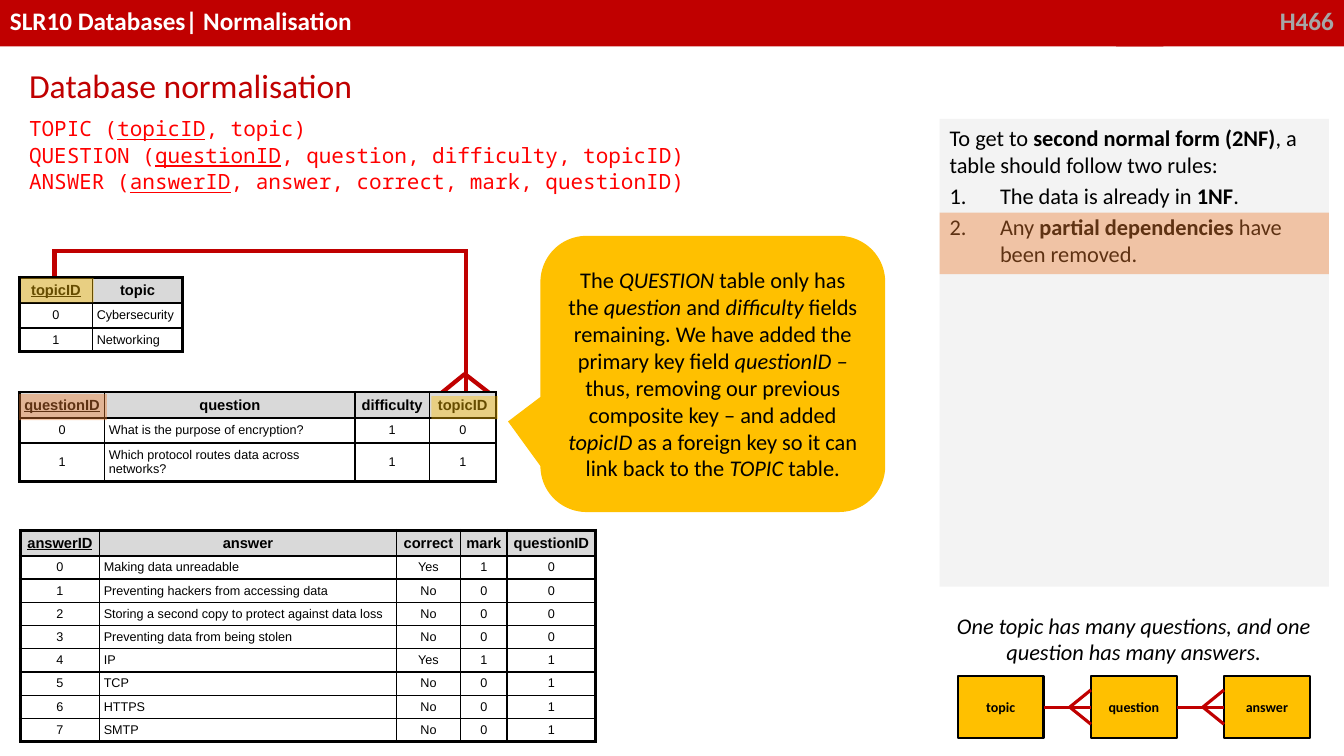
from lxml.etree import Element, SubElement as sub
from pptx import Presentation
from pptx.dml.color import RGBColor as RGB
from pptx.enum.shapes import MSO_CONNECTOR as CONN, MSO_SHAPE as SHAPE
from pptx.enum.text import MSO_ANCHOR as ANCHOR, PP_ALIGN as ALIGN
from pptx.oxml.ns import qn
from pptx.util import Inches, Pt

RED = RGB(0xC0, 0x00, 0x00)
BRIGHT = RGB(0xFF, 0x00, 0x00)
GOLD = RGB(0xFF, 0xC0, 0x00)
ORANGE = RGB(0xED, 0x7D, 0x31)
BLACK = RGB(0x00, 0x00, 0x00)
WHITE = RGB(0xFF, 0xFF, 0xFF)
PALE = RGB(0xF2, 0xF2, 0xF2)
GREY = RGB(0xD9, 0xD9, 0xD9)
MUTED = RGB(0xA6, 0xA6, 0xA6)

# Content: asterisks enclose the marked words
SCHEMA = [
    "TOPIC (*topicID*, topic)",
    "QUESTION (*questionID*, question, difficulty, topicID)",
    "ANSWER (*answerID*, answer, correct, mark, questionID)",
]
RULES = [
    "To get to *second normal form (2NF)*, a table should follow two rules:",
    "The data is already in *1NF*.",
    "Any *partial dependencies *have been removed.",
]
NOTE = ("The *QUESTION* table only has the *question* and *difficulty* fields "
        "remaining. We have added the primary key field *questionID – *thus, "
        "removing our previous composite key – and added *topicID* as a foreign "
        "key so it can link back to the *TOPIC* table.")
SUMMARY = "One topic has many questions, and one question has many answers."
TABLES = [
    dict(at=(0.2, 5.26), cols=[0.79, 2.94, 0.64, 0.46, 0.88],
         heights=[0.25] + [0.23] * 8, left=1, rows=[
        ("*answerID*", "answer", "correct", "mark", "questionID"),
        ("0", "Making data unreadable", "Yes", "1", "0"),
        ("1", "Preventing hackers from accessing data", "No", "0", "0"),
        ("2", "Storing a second copy to protect against data loss", "No", "0", "0"),
        ("3", "Preventing data from being stolen", "No", "0", "0"),
        ("4", "IP", "Yes", "1", "1"),
        ("5", "TCP", "No", "0", "1"),
        ("6", "HTTPS", "No", "0", "1"),
        ("7", "SMTP", "No", "0", "1")]),
    dict(at=(0.19, 2.75), cols=[0.73, 0.89], heights=[0.25, 0.25, 0.23],
         left=1, rows=[
        ("*topicID*", "topic"),
        ("0", "Cybersecurity"),
        ("1", "Networking")]),
    dict(at=(0.19, 3.89), cols=[0.85, 2.48, 0.74, 0.66],
         heights=[0.25, 0.25, 0.38], left=1, rows=[
        ("*questionID*", "question", "difficulty", "topicID"),
        ("0", "What is the purpose of encryption?", "1", "0"),
        ("1", "Which protocol routes data across networks?", "1", "1")]),
]
KEYS = [((0.21, 2.76, 0.72, 0.24), GOLD), ((0.19, 3.91, 0.87, 0.26), ORANGE),
        ((4.28, 3.93, 0.66, 0.23), GOLD), ((9.32, 2.11, 3.86, 0.61), ORANGE)]
LINKS = [(0.54, 2.75, 0.54, 2.47), (0.52, 2.49, 4.61, 2.49),
         (4.62, 4, 4.62, 2.47), (4.34, 3.93, 4.61, 3.71), (4.88, 3.92, 4.61, 3.71)]
ENTITIES = ["topic", "question", "answer"]

deck = Presentation()
deck.slide_width, deck.slide_height = Inches(13.33), Inches(7.5)
slide = deck.slides.add_slide(deck.slide_layouts[6])
shapes = slide.shapes


def write(frame, text, size=16, font="Calibri", color=BLACK, align=ALIGN.LEFT,
          mark="bold", gap=0, line=None, after=None, **style):
    """Fill a text frame, one paragraph for each line of text."""
    frame.word_wrap = True
    for i, part in enumerate(text.split("\n")):
        para = frame.paragraphs[0] if i == 0 else frame.add_paragraph()
        para.alignment = align
        if i and gap:
            para.space_before = Pt(gap)
        if line:
            para.line_spacing = line
        if after:
            para.space_after = Pt(after)
        for j, words in enumerate(part.split("*")):
            if not words:
                continue
            run = para.add_run()
            run.text = words
            face = run.font
            face.size, face.name, face.color.rgb = Pt(size), font, color
            for name in style:
                setattr(face, name, style[name])
            if j % 2:
                setattr(face, mark, True)


def block(at, fill, kind=SHAPE.RECTANGLE, alpha=100, edge=None,
          anchor=ANCHOR.TOP):
    box = shapes.add_shape(kind, *map(Inches, at))
    box.shadow.inherit = False
    box.fill.solid()
    box.fill.fore_color.rgb = fill
    if alpha < 100:
        tint = box._element.spPr.find(".//" + qn("a:srgbClr"))
        sub(tint, qn("a:alpha"), val=str(alpha * 1000))
    if edge:
        box.line.color.rgb, box.line.width = BLACK, Pt(edge)
    else:
        box.line.fill.background()
    box.text_frame.vertical_anchor = anchor
    return box


def label(at, text, **style):
    write(shapes.add_textbox(*map(Inches, at)).text_frame, text, **style)


def rule(ends, width):
    line = shapes.add_connector(CONN.STRAIGHT, *map(Inches, ends))
    line.line.color.rgb, line.line.width = RED, Pt(width)
    sub(line._element.spPr, qn("a:effectLst"))
    return line


def border(cell, sides):
    props = cell._tc.get_or_add_tcPr()
    for i, (side, width) in enumerate(zip("LRTB", sides)):
        edge = Element(qn("a:ln" + side), w=str(Pt(width)))
        sub(sub(edge, qn("a:solidFill")), qn("a:srgbClr"), val=str(BLACK))
        props.insert(i, edge)


def grid(at, cols, heights, left, rows):
    """Draw a table; column number left holds left-aligned text."""
    size = sum(cols), sum(heights)
    table = shapes.add_table(len(rows), len(cols), *map(Inches, at + size)).table
    table.first_row = table.horz_banding = False
    for col, width in zip(table.columns, cols):
        col.width = Inches(width)
    for r, row in enumerate(rows):
        table.rows[r].height = Inches(heights[r])
        head, last = r == 0, r == len(rows) - 1
        for c, text in enumerate(row):
            cell = table.cell(r, c)
            cell.margin_left = cell.margin_right = Inches(0.04)
            cell.margin_top = cell.margin_bottom = Inches(0.04)
            cell.vertical_anchor = ANCHOR.MIDDLE
            if head:
                cell.fill.solid()
                cell.fill.fore_color.rgb = GREY
            else:
                cell.fill.background()
            border(cell, (2.25 if c == 0 else 1,
                          2.25 if c == len(row) - 1 else 1,
                          2.25 if head else 1.5 if r == 1 else 1,
                          2.25 if last else 1.5 if head else 1))
            side = ALIGN.LEFT if c == left and not head else ALIGN.CENTER
            write(cell.text_frame, text, size=10.5 if head else 9, font="Arial",
                  align=side, mark="underline", bold=head)


# Header bar
write(block((11.07, 0, 2.26, 0.46), RED).text_frame, "H466",
      size=18, color=MUTED, align=ALIGN.RIGHT, bold=True)
write(block((0, 0, 11.54, 0.46), RED).text_frame,
      "SLR10 Databases| Normalisation", size=18, color=WHITE, bold=True)

# Rules panel, with its last two lines numbered
panel = block((9.32, 1.18, 3.86, 4.64), PALE, alpha=90).text_frame
write(panel, "\n".join(RULES), gap=3.2)
for para in panel.paragraphs[1:]:
    props = para._p.get_or_add_pPr()
    props.set("marL", str(Inches(0.5)))
    props.set("indent", str(Inches(-0.5)))
    sub(props, qn("a:buFont"), typeface="+mj-lt")
    sub(props, qn("a:buAutoNum"), type="arabicPeriod")

# Title and schema
write(block((0.19, 0.57, 9.23, 0.51), WHITE, alpha=70).text_frame,
      "Database normalisation", size=24, color=RED, line=1.07, after=8)
label((0.19, 1.1, 8.77, 0.96), "\n".join(SCHEMA), size=15,
      font="Noto Sans Mono", color=BRIGHT, mark="underline", gap=1)

# Callout
note = block((5.36, 2.34, 3.42, 2.74), GOLD, anchor=ANCHOR.MIDDLE,
             kind=SHAPE.ROUNDED_RECTANGULAR_CALLOUT)
for i, value in enumerate((-0.594, 0.172, 0.167)):
    note.adjustments[i] = value
write(note.text_frame, NOTE, align=ALIGN.CENTER, mark="italic")

# Key link, tables and highlights
for ends in LINKS:
    rule(ends, 3)
for spec_row in TABLES:
    grid(**spec_row)
for at, fill in KEYS:
    block(at, fill, alpha=40)

# Entity diagram
label((9.31, 6.02, 3.87, 0.64), SUMMARY, align=ALIGN.CENTER, italic=True)
X, Y, WIDE, HIGH, STEP = 9.5, 6.71, 0.85, 0.61, 1.32
mid, prev = Y + HIGH / 2, None
for i, name in enumerate(ENTITIES):
    x = X + i * STEP
    box = block((x, Y, WIDE, HIGH), GOLD, edge=1.5, anchor=ANCHOR.MIDDLE)
    write(box.text_frame, name, size=10, align=ALIGN.CENTER, bold=True)
    if prev:
        line = rule((x - STEP + WIDE, mid, x, mid), 2.25)
        line.begin_connect(prev, 3)
        line.end_connect(box, 1)
        for rise in (-0.17, 0.17):
            rule((x - 0.21, mid, x, mid + rise), 2.25)
    prev = box

deck.save("out.pptx")
